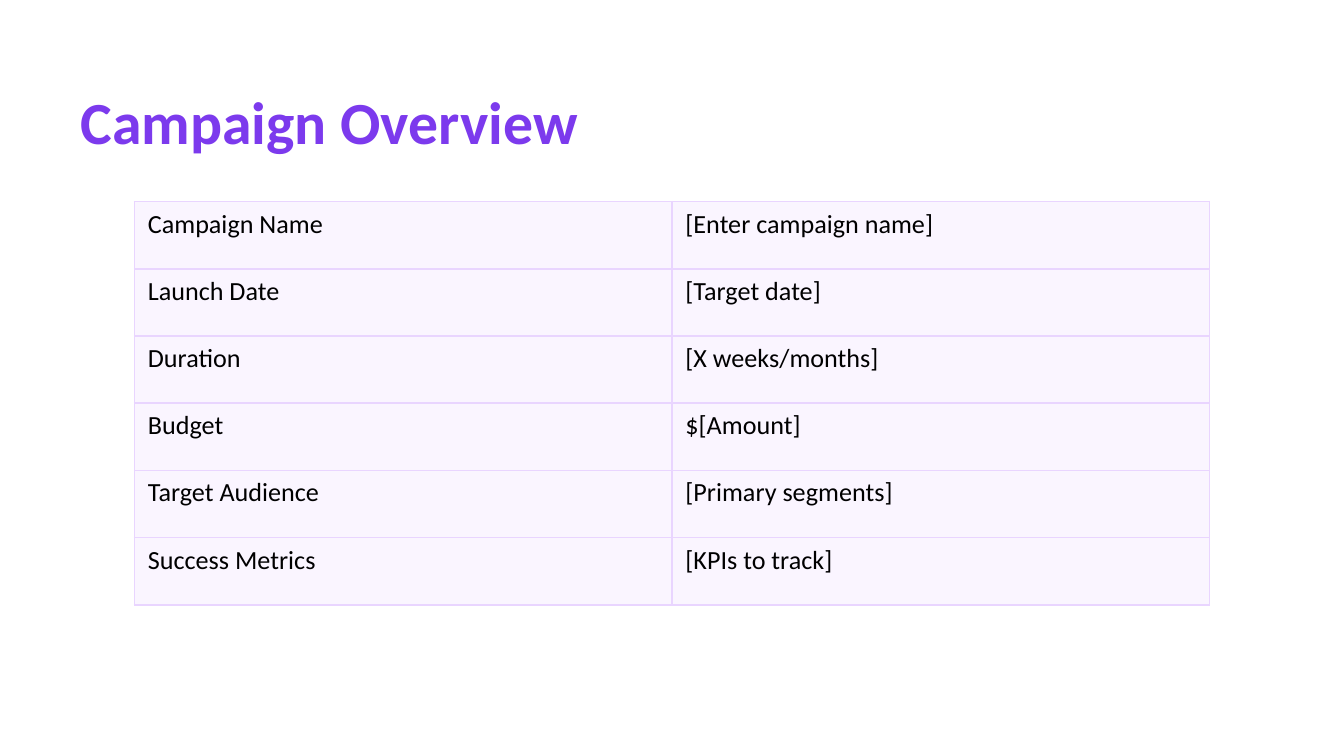
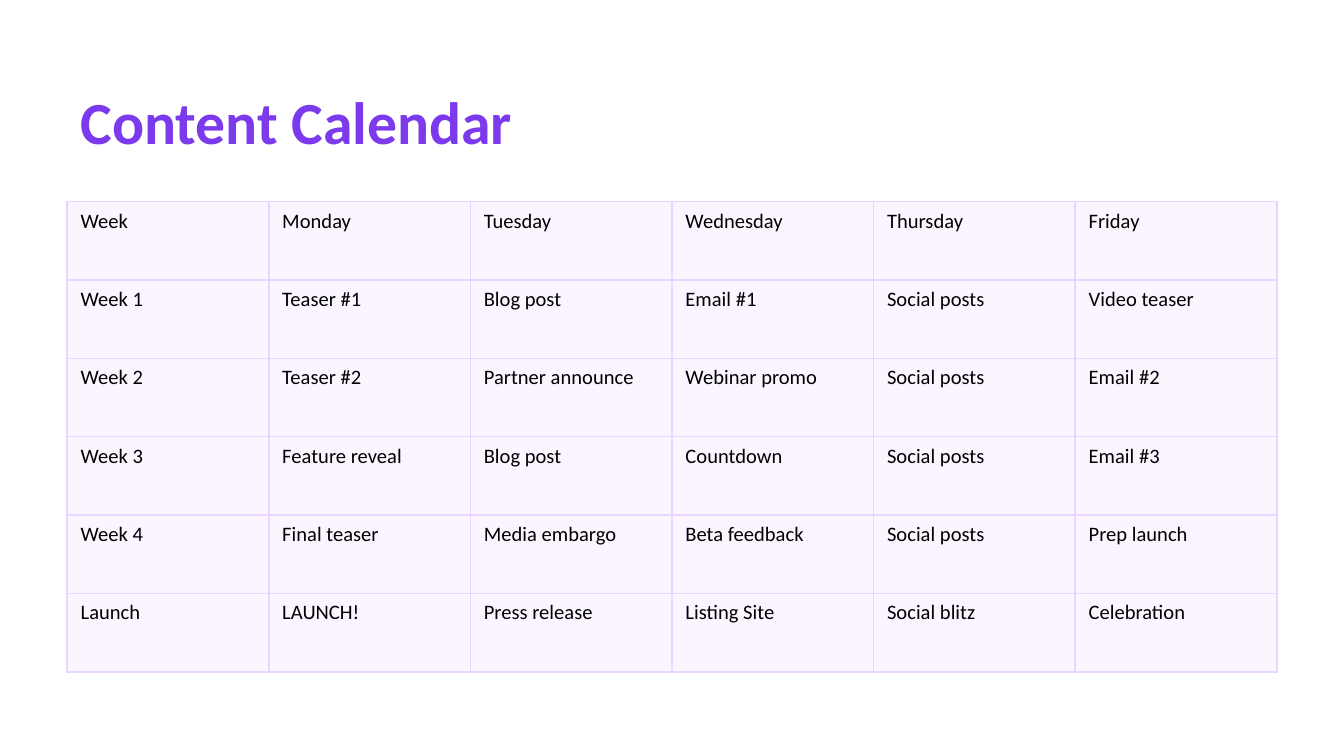
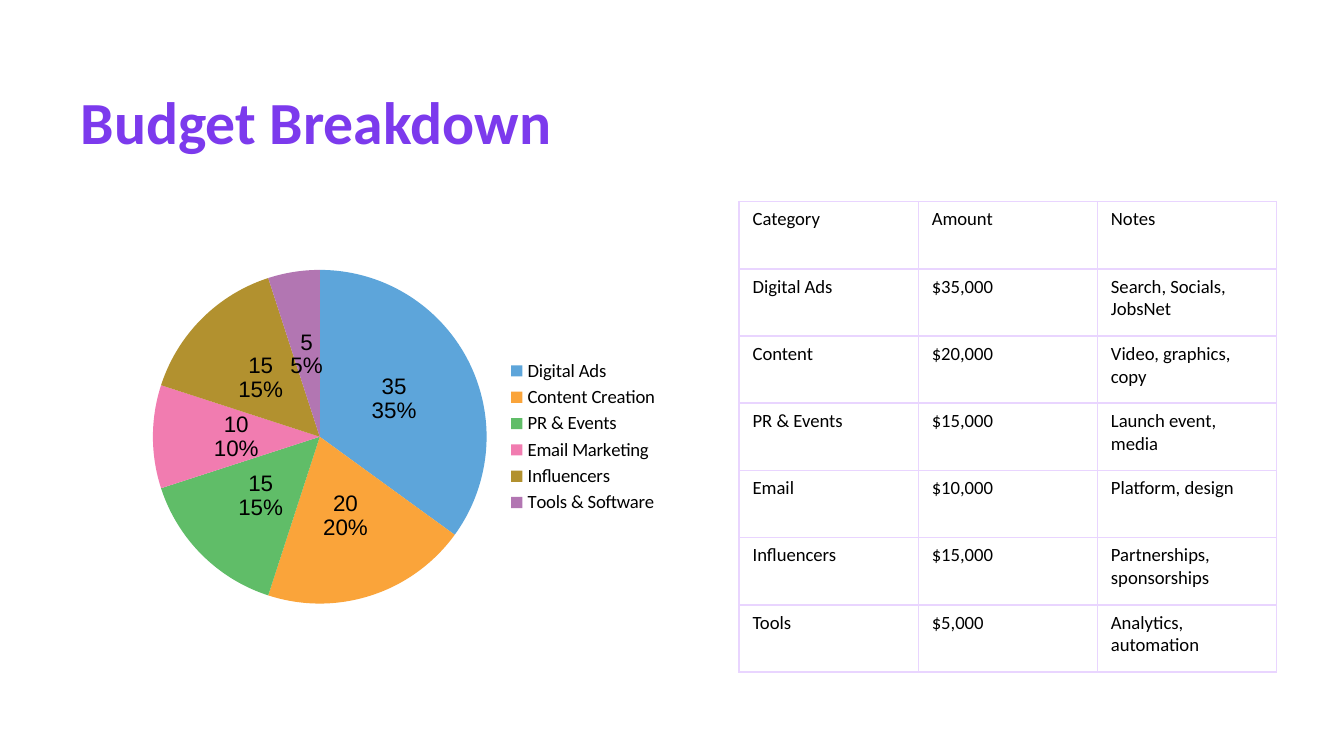
from lxml import etree
from pptx import Presentation
from pptx.chart.data import CategoryChartData
from pptx.dml.color import RGBColor
from pptx.enum.chart import XL_CHART_TYPE, XL_LABEL_POSITION, XL_LEGEND_POSITION
from pptx.enum.text import MSO_ANCHOR, MSO_AUTO_SIZE, PP_ALIGN
from pptx.oxml.ns import qn
from pptx.util import Inches, Pt

PIE = XL_CHART_TYPE.PIE
LABEL_CENTER = XL_LABEL_POSITION.CENTER
LEGEND_RIGHT = XL_LEGEND_POSITION.RIGHT
MIDDLE = MSO_ANCHOR.MIDDLE
NO_AUTOFIT = MSO_AUTO_SIZE.NONE
LEFT = PP_ALIGN.LEFT
TITLE_ONLY = 5

# Shared look
FONT = "Calibri"
LABEL_FONT = "Arial"
VIOLET = "7C3AED"
LILAC = "FAF5FF"
GRID = "E9D5FF"
BLACK = "000000"
SLICE_EDGE = "F9F9F9"
SLICE_COLORS = ["5DA5DA", "FAA43A", "60BD68", "F17CB0", "B2912F", "B276B2"]
CONTENT_TOP = 1.5

# Content
OVERVIEW = [
    ["Campaign Name", "[Enter campaign name]"],
    ["Launch Date", "[Target date]"],
    ["Duration", "[X weeks/months]"],
    ["Budget", "$[Amount]"],
    ["Target Audience", "[Primary segments]"],
    ["Success Metrics", "[KPIs to track]"],
]
CALENDAR = [
    ["Week", "Monday", "Tuesday", "Wednesday", "Thursday", "Friday"],
    ["Week 1", "Teaser #1", "Blog post", "Email #1", "Social posts", "Video teaser"],
    ["Week 2", "Teaser #2", "Partner announce", "Webinar promo", "Social posts", "Email #2"],
    ["Week 3", "Feature reveal", "Blog post", "Countdown", "Social posts", "Email #3"],
    ["Week 4", "Final teaser", "Media embargo", "Beta feedback", "Social posts", "Prep launch"],
    ["Launch", "LAUNCH!", "Press release", "Listing Site", "Social blitz", "Celebration"],
]
BUDGET = [
    ["Category", "Amount", "Notes"],
    ["Digital Ads", "$35,000", "Search, Socials, JobsNet"],
    ["Content", "$20,000", "Video, graphics, copy"],
    ["PR & Events", "$15,000", "Launch event, media"],
    ["Email", "$10,000", "Platform, design"],
    ["Influencers", "$15,000", "Partnerships, sponsorships"],
    ["Tools", "$5,000", "Analytics, automation"],
]
BUDGET_SHARES = {
    "Digital Ads": 35,
    "Content Creation": 20,
    "PR & Events": 15,
    "Email Marketing": 10,
    "Influencers": 15,
    "Tools & Software": 5,
}


def rgb(hex_color):
    return RGBColor.from_string(hex_color)


def style_font(font, size, color=BLACK, name=FONT, bold=False):
    font.name = name
    font.size = Pt(size)
    font.bold = bold
    font.color.rgb = rgb(color)


def add_titled_slide(prs, heading):
    slide = prs.slides.add_slide(prs.slide_layouts[TITLE_ONLY])
    title = slide.shapes.title
    title.left, title.top = Inches(0.5), Inches(0.5)
    title.width, title.height = Inches(9), Inches(0.8)
    frame = title.text_frame
    frame.text = heading
    frame.auto_size = NO_AUTOFIT
    frame.vertical_anchor = MIDDLE
    paragraph = frame.paragraphs[0]
    paragraph.alignment = LEFT
    style_font(paragraph.runs[0].font, 32, VIOLET, bold=True)
    return slide


def set_borders(cell, color, points):
    properties = cell._tc.get_or_add_tcPr()
    for side in ("lnL", "lnR", "lnT", "lnB"):
        line = etree.SubElement(properties, qn(f"a:{side}"), w=str(Pt(points)))
        fill = etree.SubElement(line, qn("a:solidFill"))
        etree.SubElement(fill, qn("a:srgbClr"), val=color)


def add_grid(slide, rows, left, width, height, size, fill=None):
    """Add a table with equal columns and equal rows."""
    column_count = len(rows[0])
    table = slide.shapes.add_table(
        len(rows), column_count,
        Inches(left), Inches(CONTENT_TOP), Inches(width), Inches(height),
    ).table
    table.first_row = False
    table.horz_banding = False
    for column in table.columns:
        column.width = Inches(width / column_count)
    for row, texts in zip(table.rows, rows):
        row.height = Inches(height / len(rows))
        for cell, text in zip(row.cells, texts):
            cell.text = text
            style_font(cell.text_frame.paragraphs[0].runs[0].font, size)
            set_borders(cell, GRID, 1)
            if fill:
                cell.fill.solid()
                cell.fill.fore_color.rgb = rgb(fill)
            else:
                cell.fill.background()


def add_share_pie(slide, shares, left, width, height):
    data = CategoryChartData()
    data.categories = list(shares)
    data.add_series("Series 1", list(shares.values()))
    chart = slide.shapes.add_chart(
        PIE, Inches(left), Inches(CONTENT_TOP), Inches(width), Inches(height), data
    ).chart
    style_font(chart.font, 10)
    chart.has_title = False
    chart.has_legend = True
    chart.legend.position = LEGEND_RIGHT
    chart.legend.include_in_layout = False
    chart.plots[0].vary_by_categories = True

    # Slices
    series = chart.plots[0].series[0]
    series.format.line.color.rgb = rgb(SLICE_EDGE)
    series.format.line.width = Pt(0.75)
    for index, color in enumerate(SLICE_COLORS):
        slice_fill = series.points[index].format.fill
        slice_fill.solid()
        slice_fill.fore_color.rgb = rgb(color)

    # Value above percentage on each slice
    labels = series.data_labels
    labels.show_value = True
    labels.show_percentage = True
    labels.position = LABEL_CENTER
    style_font(labels.font, 12, name=LABEL_FONT)
    separator = etree.Element(qn("c:separator"))
    separator.text = "\n"
    labels._element.find(qn("c:showBubbleSize")).addnext(separator)


def main():
    prs = Presentation()
    prs.slide_width = Inches(10)
    prs.slide_height = prs.slide_width * 9 // 16

    overview = add_titled_slide(prs, "Campaign Overview")
    add_grid(overview, OVERVIEW, left=1, width=8, height=3, size=14, fill=LILAC)

    calendar = add_titled_slide(prs, "Content Calendar")
    add_grid(calendar, CALENDAR, left=0.5, width=9, height=3.5, size=11, fill=LILAC)

    budget = add_titled_slide(prs, "Budget Breakdown")
    add_share_pie(budget, BUDGET_SHARES, left=1, width=4, height=3.5)
    add_grid(budget, BUDGET, left=5.5, width=4, height=3.5, size=10)

    prs.save("out.pptx")


if __name__ == "__main__":
    main()
